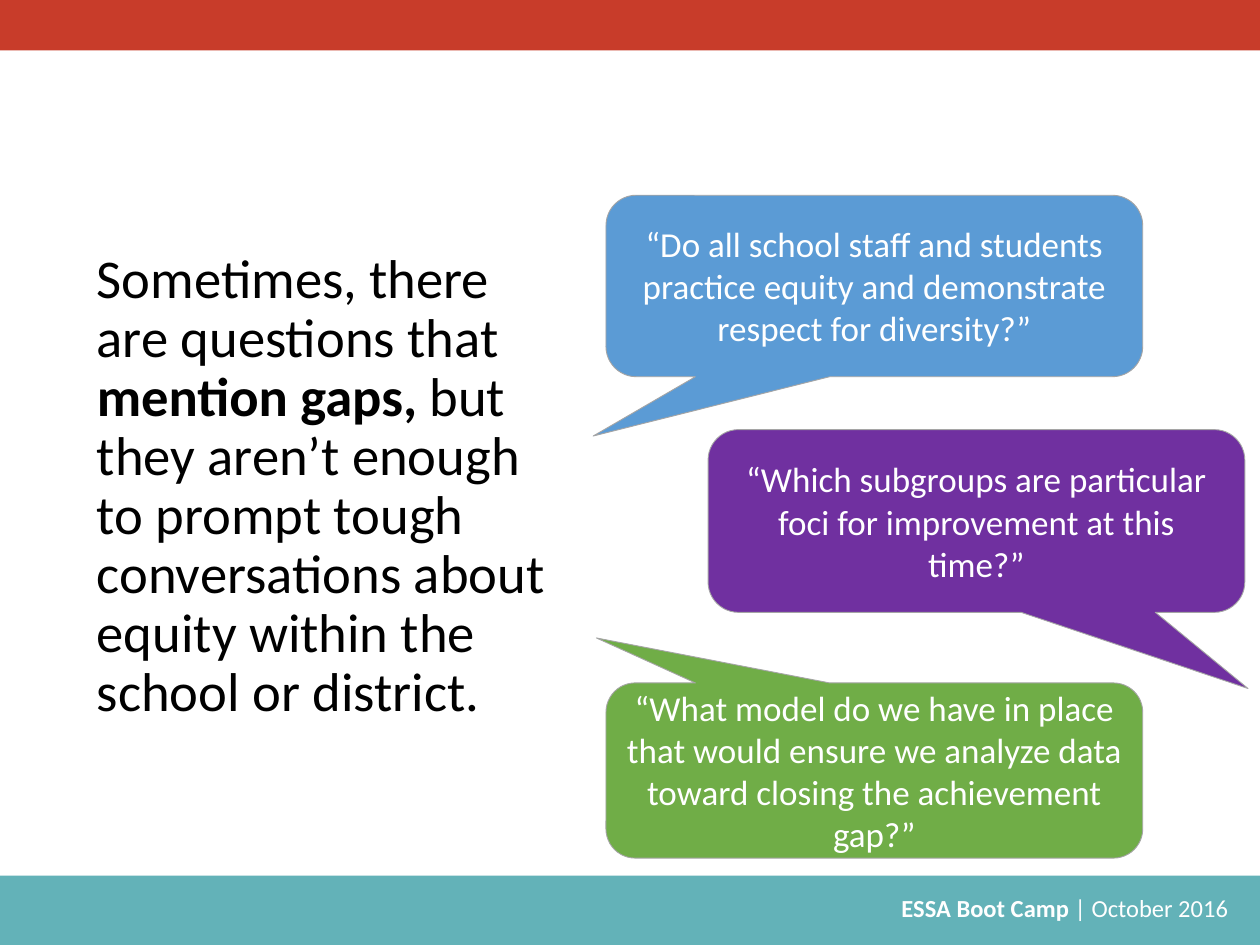
import pptx
import pptx.util
from pptx.dml.color import RGBColor
from pptx.enum.shapes import MSO_SHAPE
from pptx.enum.text import MSO_ANCHOR, PP_ALIGN

WIDE, HIGH = 10, 7.5
FONT = "Calibri"
WHITE = RGBColor(0xFF, 0xFF, 0xFF)
BLACK = RGBColor(0x00, 0x00, 0x00)
RED = RGBColor(0xC8, 0x3C, 0x2A)
TEAL = RGBColor(0x63, 0xB2, 0xB8)
BLUE = RGBColor(0x5B, 0x9B, 0xD5)
PURPLE = RGBColor(0x70, 0x30, 0xA0)
GREEN = RGBColor(0x70, 0xAD, 0x47)
GREY = RGBColor(0xA5, 0xA5, 0xA5)

LEFT, RIGHT = 4.81, 5.62  # the two bubble columns
BUBBLE = 4.26  # bubble width

# left, top, height, tail tip from the centre as shares of the size, fill, text
BUBBLES = [
    (RIGHT, 3.41, 1.45, (0.506, 0.917), PURPLE,
     "“Which subgroups are particular foci for improvement at this time?”"),
    (LEFT, 1.55, 1.44, (-0.524, 0.827), BLUE,
     "“Do all school staff and students practice equity and demonstrate "
     "respect for diversity?”"),
    (LEFT, 5.42, 1.39, (-0.518, -0.757), GREEN,
     "“What model do we have in place that would ensure we analyze data "
     "toward closing the achievement gap?”"),
]


def place(*box):
    return [pptx.util.Inches(side) for side in box]


def write(shape, runs, size, color, align, anchor=MSO_ANCHOR.MIDDLE):
    """Fill the shape with one paragraph of (text, bold) runs."""
    frame = shape.text_frame
    frame.word_wrap = True
    frame.vertical_anchor = anchor
    para = frame.paragraphs[0]
    para.alignment = align
    for text, bold in runs:
        run = para.add_run()
        run.text = text
        run.font.name = FONT
        run.font.size = pptx.util.Pt(size)
        run.font.bold = bold
        run.font.color.rgb = color
    return para


def block(slide, kind, box, fill):
    shape = slide.shapes.add_shape(kind, *place(*box))
    shape.shadow.inherit = False
    shape.fill.solid()
    shape.fill.fore_color.rgb = fill
    return shape


def band(slide, top, height, fill):
    shape = block(slide, MSO_SHAPE.RECTANGLE, (0, top, WIDE, height), fill)
    shape.line.fill.background()


def bubble(slide, left, top, height, tip, fill, text):
    shape = block(slide, MSO_SHAPE.ROUNDED_RECTANGULAR_CALLOUT,
                  (left, top, BUBBLE, height), fill)
    shape.adjustments[0], shape.adjustments[1] = tip
    shape.line.color.rgb = GREY
    shape.line.width = pptx.util.Pt(0.5)
    write(shape, [(text, False)], 20, WHITE, PP_ALIGN.CENTER)


def label(slide, box, *style):
    return write(slide.shapes.add_textbox(*place(*box)), *style)


def main():
    deck = pptx.Presentation()
    deck.slide_width, deck.slide_height = place(WIDE, HIGH)
    slide = deck.slides.add_slide(deck.slide_layouts[6])

    band(slide, HIGH - 0.55, 0.55, TEAL)
    band(slide, 0, 0.4, RED)
    label(slide, (3.6, 7.04, 6.29, 0.34),
          [("ESSA Boot Camp ", True), ("| October 2016 ", False)],
          14, WHITE, PP_ALIGN.RIGHT, MSO_ANCHOR.TOP)
    for item in BUBBLES:
        bubble(slide, *item)
    body = label(slide, (0.67, 1.35, 3.87, 5.04),
                 [("Sometimes, there are questions that ", False),
                  ("mention gaps, ", True),
                  ("but they aren’t enough to prompt tough conversations "
                   "about equity within the school or district.", False)],
                 31.2, BLACK, PP_ALIGN.LEFT)
    body.line_spacing = 0.9

    deck.save("out.pptx")


if __name__ == "__main__":
    main()
